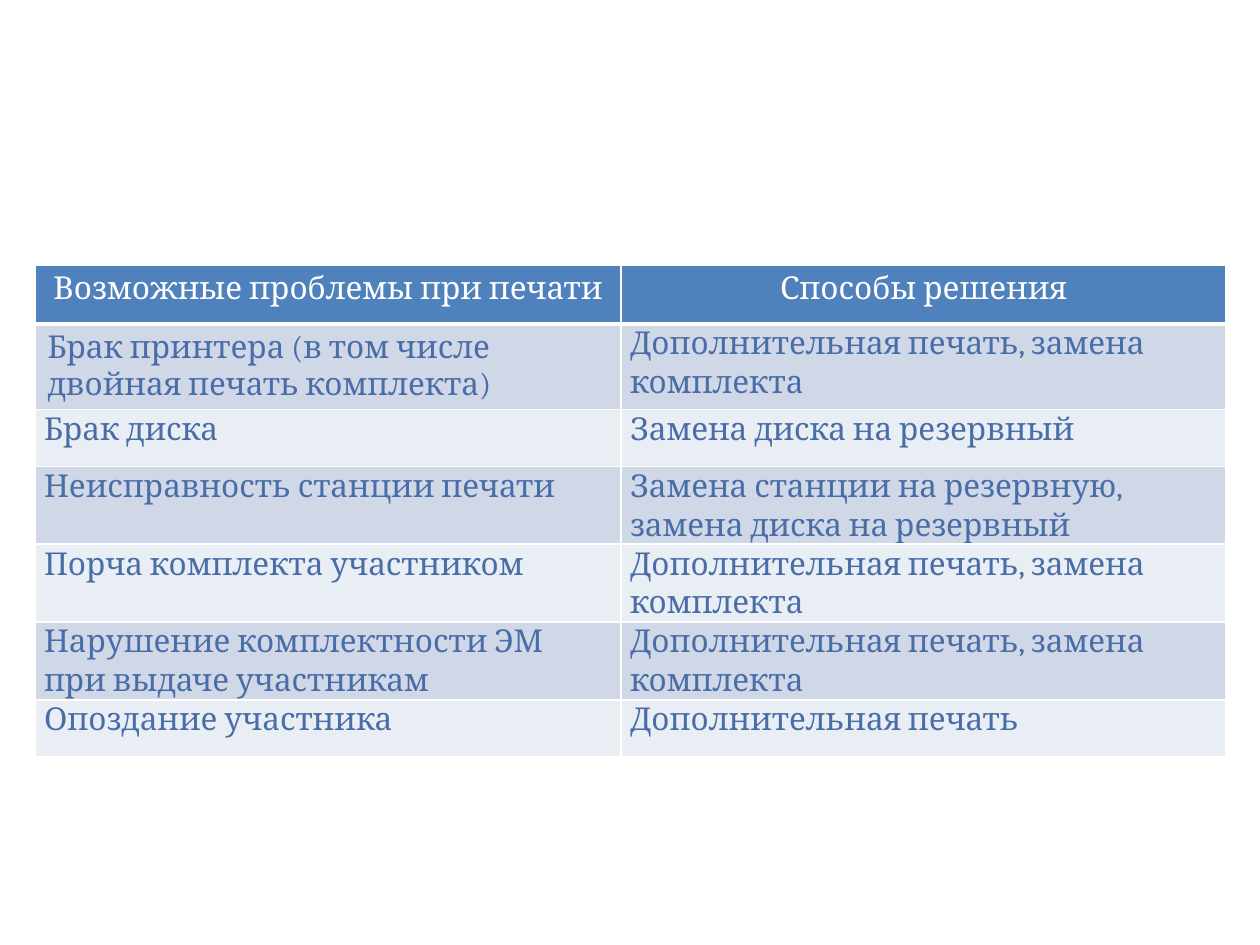
"""Build a slide with a table of printing problems and their solutions."""
import pptx
import pptx.util
import pptx.dml.color
import pptx.enum.text
import pptx.oxml
import pptx.oxml.ns

ROWS = [
    ("Возможные проблемы при печати", "Способы решения"),
    ("Брак принтера (в том числе двойная печать комплекта)",
     "Дополнительная печать, замена комплекта"),
    ("Брак диска", "Замена диска на резервный"),
    ("Неисправность станции печати",
     "Замена станции на резервную, замена диска на резервный"),
    ("Порча комплекта участником", "Дополнительная печать, замена комплекта"),
    ("Нарушение комплектности ЭМ при выдаче участникам",
     "Дополнительная печать, замена комплекта"),
    ("Опоздание участника", "Дополнительная печать"),
]
PAGE_WIDTH, PAGE_HEIGHT = 1260, 945
LEFT, TOP = 35, 265
COLUMN_WIDTHS = (586, 605)
HEADER_HEIGHT, ROW_HEIGHT = 59, 57
HEADER_FILL, BAND_FILLS = "4F81BD", ("D0D8E8", "E9EDF4")
HEADER_TEXT, BODY_TEXT, BORDER = "FFFFFF", "496DA7", "FFFFFF"
FONT = {"name": "Cambria", "size": pptx.util.Pt(18), "bold": False}
TIGHT = {"margin_left": 9, "margin_right": 9, "margin_top": 0, "margin_bottom": 0}


def px(length):
    return pptx.util.Emu(length * 914400 // 126)


def color(value):
    return pptx.dml.color.RGBColor.from_string(value)


def add_borders(cell, widths):
    properties = cell._tc.get_or_add_tcPr()
    for side, points in widths.items():
        properties.append(pptx.oxml.parse_xml(
            f'<a:ln{side} {pptx.oxml.ns.nsdecls("a")} w="{pptx.util.Pt(points)}">'
            f'<a:solidFill><a:srgbClr val="{BORDER}"/></a:solidFill></a:ln{side}>'))


def fill_cell(cell, text, row, column):
    header = row == 0
    tight = row > 1 or (row == 1 and column == 1)
    add_borders(cell, {"L": 1, "R": 1, "T": 3 if row == 1 else 1, "B": 3 if header else 1})
    cell.fill.solid()
    cell.fill.fore_color.rgb = color(HEADER_FILL if header else BAND_FILLS[(row - 1) % 2])
    cell.text = text
    para = cell.text_frame.paragraphs[0]
    if header:
        para.alignment = pptx.enum.text.PP_ALIGN.CENTER
    if tight:
        para.line_spacing = 1.07
        for name, length in TIGHT.items():
            setattr(cell, name, px(length))
    span = para.runs[0]
    for name, value in FONT.items():
        setattr(span.font, name, value)
    span.font.color.rgb = color(HEADER_TEXT if header else BODY_TEXT)


def main():
    deck = pptx.Presentation()
    deck.slide_width, deck.slide_height = px(PAGE_WIDTH), px(PAGE_HEIGHT)
    page = deck.slides.add_slide(deck.slide_layouts[6])
    heights = [HEADER_HEIGHT] + [ROW_HEIGHT] * (len(ROWS) - 1)
    table = page.shapes.add_table(
        len(ROWS), len(COLUMN_WIDTHS), px(LEFT), px(TOP),
        px(sum(COLUMN_WIDTHS)), px(sum(heights))).table
    for column, width in zip(table.columns, COLUMN_WIDTHS):
        column.width = px(width)
    for row, (height, texts) in enumerate(zip(heights, ROWS)):
        table.rows[row].height = px(height)
        for column, text in enumerate(texts):
            fill_cell(table.cell(row, column), text, row, column)
    deck.save("out.pptx")


if __name__ == "__main__":
    main()
